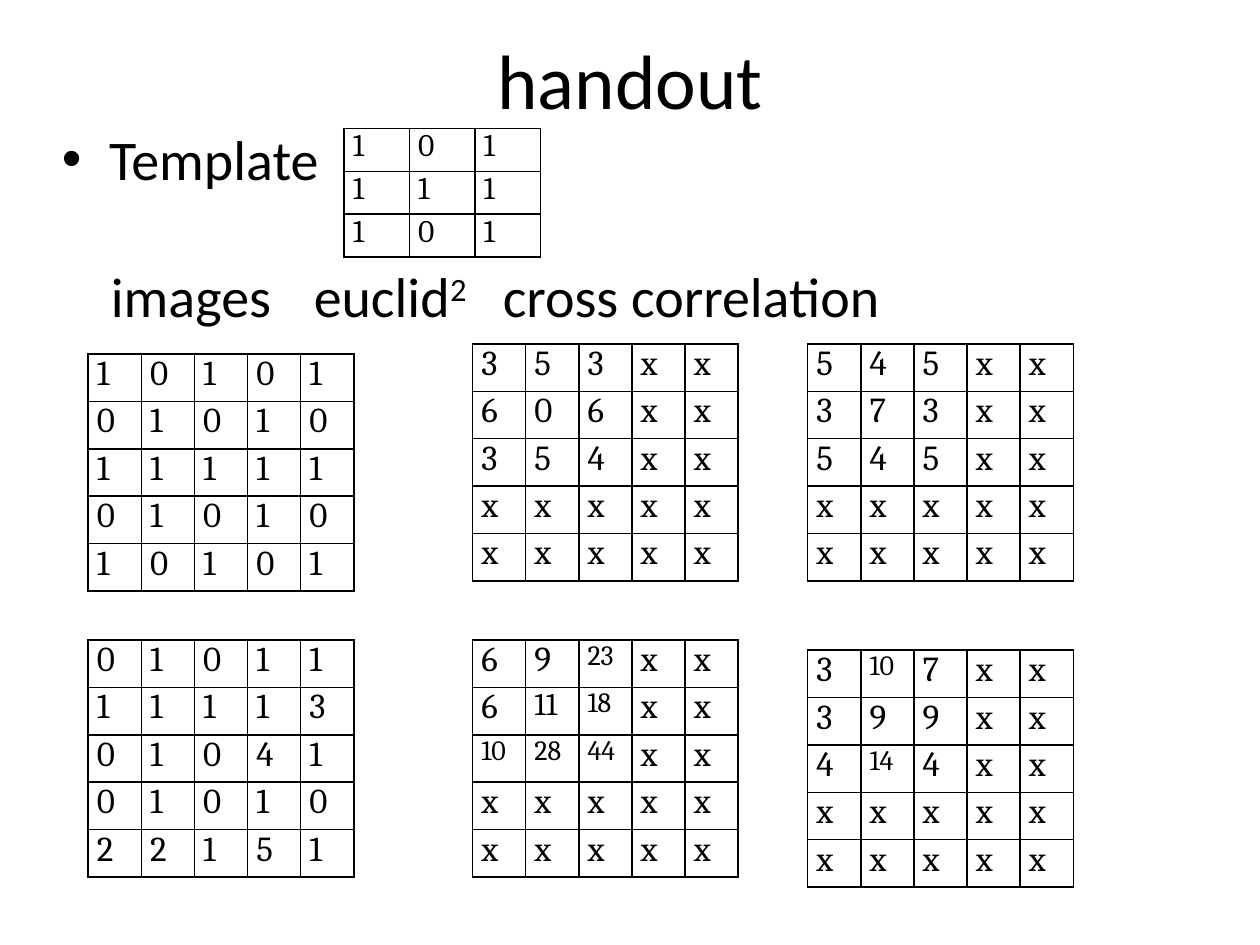
from lxml.etree import SubElement
from pptx import Presentation
from pptx.dml.color import RGBColor
from pptx.enum.text import MSO_ANCHOR, MSO_AUTO_SIZE, PP_ALIGN as Align
from pptx.oxml.ns import qn
from pptx.util import Inches, Pt

# Content
TITLE = "handout"
TEMPLATE_LABEL = "Template"
HEADINGS = [("images\teuclid", 0), ("2", 30000), ("\tcross correlation", 0)]
TEMPLATE = ["1 0 1", "1 1 1", "1 0 1"]
IMAGES = [
    ["1 0 1 0 1", "0 1 0 1 0", "1 1 1 1 1", "0 1 0 1 0", "1 0 1 0 1"],
    ["0 1 0 1 1", "1 1 1 1 3", "0 1 0 4 1", "0 1 0 1 0", "2 2 1 5 1"],
]
EUCLID = [["3 5 3", "6 0 6", "3 5 4"], ["6 9 23", "6 11 18", "10 28 44"]]
CORRELATION = [["5 4 5", "3 7 3", "5 4 5"], ["3 10 7", "3 9 9", "4 14 4"]]

# Column left edge, then the top edge of its upper and lower grid
COLUMNS = [
    (IMAGES, 0.7, (2.81, 5.08)),
    (EUCLID, 3.75, (2.73, 5.08)),
    (CORRELATION, 6.41, (2.73, 5.16)),
]
GRID_CELLS = 5

THEME = {
    "ink": RGBColor(0, 0, 0), "ink_hex": "000000",
    "text_font": "Calibri", "grid_font": "Cambria",
    "title": 44, "body": 32, "template": 18, "digit": 20, "number": 16,
    "special": {"11": 18},
    "border": Pt(1),
}
CELL_FORMAT = {
    "margin_left": Inches(0.07), "margin_right": Inches(0.07),
    "margin_top": 0, "margin_bottom": 0, "vertical_anchor": MSO_ANCHOR.TOP,
}


def style(run, size, face):
    formats = {"size": Pt(size), "name": face, "bold": False}
    for key, value in formats.items():
        setattr(run.font, key, value)
    run.font.color.rgb = THEME["ink"]


def add_text(paragraph, text, size, face=THEME["text_font"]):
    run = paragraph.add_run()
    run.text = text
    style(run, size, face)
    return run


def place(part, left, top, width, height):
    box = {"left": left, "top": top, "width": width, "height": height}
    for key, value in box.items():
        setattr(part, key, Inches(value))


def padded(lines, size):
    """Split the lines into cells and fill up to a square with x."""
    rows = [line.split() for line in lines]
    rows += [[] for _ in range(size - len(rows))]
    return [row + ["x"] * (size - len(row)) for row in rows]


def add_borders(cell):
    properties = cell._tc.get_or_add_tcPr()
    for side in ("lnL", "lnR", "lnT", "lnB"):
        line = SubElement(properties, qn(f"a:{side}"), w=str(THEME["border"]))
        fill = SubElement(line, qn("a:solidFill"))
        SubElement(fill, qn("a:srgbClr"), val=THEME["ink_hex"])


def add_grid(slide, rows, left, top, width, height, size=None):
    count = len(rows)
    frame = slide.shapes.add_table(
        count, count, Inches(left), Inches(top), Inches(width), Inches(height))
    grid = frame.table
    grid.first_row = grid.horz_banding = False
    for r, row in enumerate(rows):
        for c, value in enumerate(row):
            cell = grid.cell(r, c)
            for key, setting in CELL_FORMAT.items():
                setattr(cell, key, setting)
            add_borders(cell)
            cell.fill.background()
            paragraph = cell.text_frame.paragraphs[0]
            paragraph.alignment = Align.JUSTIFY
            usual = THEME["digit"] if len(value) == 1 else THEME["number"]
            value_size = size or THEME["special"].get(value, usual)
            add_text(paragraph, value, value_size, THEME["grid_font"])


def add_headings(paragraph):
    paragraph.space_before = Pt(40)
    properties = paragraph._p.get_or_add_pPr()
    properties.set("marL", "0")
    properties.set("indent", str(Inches(0.39)))
    SubElement(properties, qn("a:buNone"))
    stops = SubElement(properties, qn("a:tabLst"))
    for stop in (3.46, 5.98):
        SubElement(stops, qn("a:tab"), pos=str(Inches(stop)), algn="l")
    for text, baseline in HEADINGS:
        run = add_text(paragraph, text, THEME["body"])
        if baseline:
            run.font._element.set("baseline", str(baseline))


def main():
    deck = Presentation()
    deck.slide_width, deck.slide_height = Inches(10), Inches(7.5)
    slide = deck.slides.add_slide(deck.slide_layouts[1])

    # Title
    title = slide.shapes.title
    place(title, 0.5, 0, 9, 1.25)
    title.text_frame.vertical_anchor = MSO_ANCHOR.MIDDLE
    heading = title.text_frame.paragraphs[0]
    heading.alignment = Align.CENTER
    add_text(heading, TITLE, THEME["title"])

    # Template label and column headings
    body = slide.placeholders[1]
    place(body, 0.39, 0.94, 9.3, 4.95)
    body.text_frame.auto_size = MSO_AUTO_SIZE.NONE
    add_text(body.text_frame.paragraphs[0], TEMPLATE_LABEL, THEME["body"])
    add_headings(body.text_frame.add_paragraph())

    # Template grid
    add_grid(slide, padded(TEMPLATE, 3), 2.73, 1.02, 1.56, 1.02, THEME["template"])

    # Image and score grids
    for grids, left, tops in COLUMNS:
        for lines, top in zip(grids, tops):
            add_grid(slide, padded(lines, GRID_CELLS), left, top, 2.11, 1.88)

    deck.save("out.pptx")


if __name__ == "__main__":
    main()
